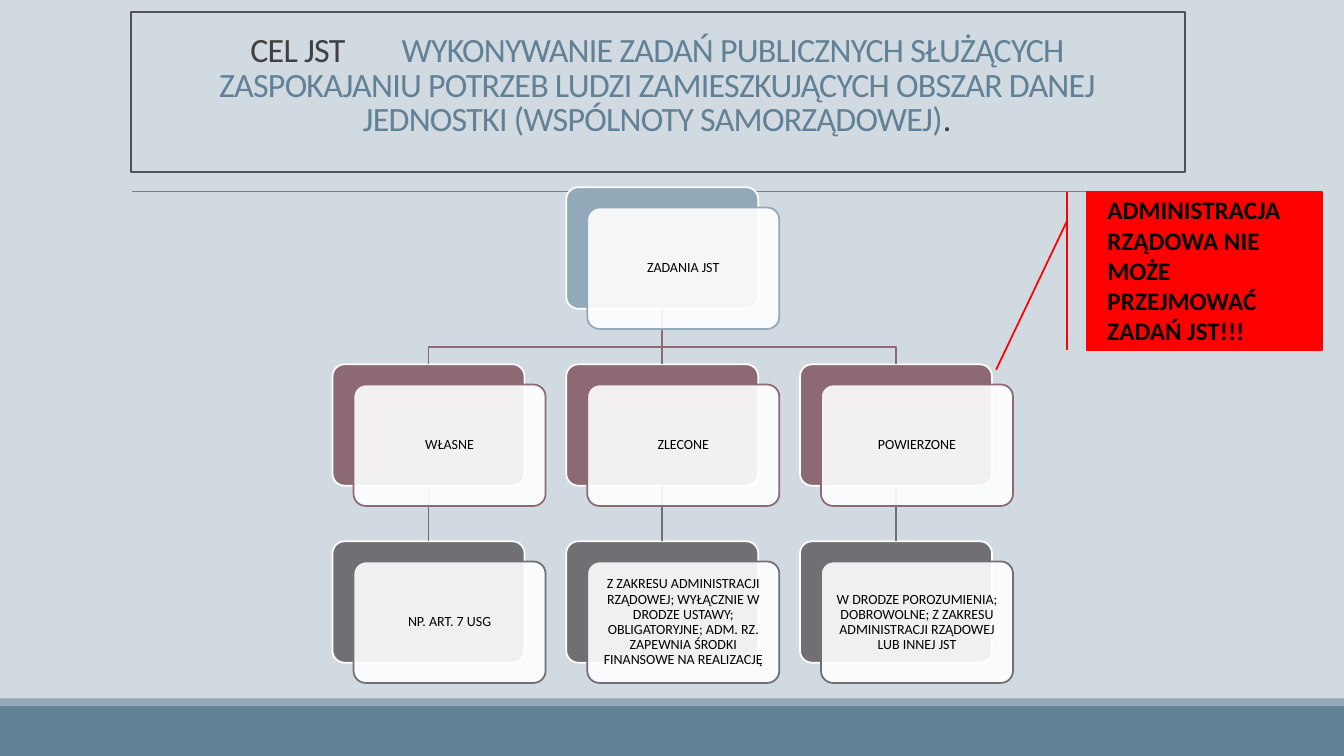
from lxml.etree import SubElement
from pptx import Presentation
from pptx.dml.color import RGBColor
from pptx.enum.shapes import MSO_CONNECTOR, MSO_SHAPE
from pptx.enum.text import MSO_ANCHOR, PP_ALIGN
from pptx.oxml.ns import qn
from pptx.util import Cm, Pt

COLORS = {
    "background": "D1D9E1", "footer": "618197", "steel": "92A9B9",
    "rule": "808080", "frame": "525256", "title": "404040",
    "mauve": "8D6974", "gray": "6F6F74", "white": "FFFFFF",
    "alert": "FF0000", "text": "000000",
}
LEVEL_COLORS = ["steel", "mauve", "gray"]
TASKS = {
    (1, 0): "ZADANIA JST",
    (0, 1): "WŁASNE",
    (1, 1): "ZLECONE",
    (2, 1): "POWIERZONE",
    (0, 2): "NP. ART. 7 USG",
    (1, 2): "Z ZAKRESU ADMINISTRACJI RZĄDOWEJ; WYŁĄCZNIE W DRODZE USTAWY; "
            "OBLIGATORYJNE; ADM. RZ. ZAPEWNIA ŚRODKI FINANSOWE NA REALIZACJĘ",
    (2, 2): "W DRODZE POROZUMIENIA; DOBROWOLNE; Z ZAKRESU ADMINISTRACJI "
            "RZĄDOWEJ LUB INNEJ JST",
}
TITLE_RUNS = [
    ("CEL JST \t", "title"),
    ("WYKONYWANIE ZADAŃ PUBLICZNYCH SŁUŻĄCYCH ZASPOKAJANIU POTRZEB LUDZI "
     "ZAMIESZKUJĄCYCH OBSZAR DANEJ JEDNOSTKI (WSPÓLNOTY SAMORZĄDOWEJ)", "footer"),
    (".", "title"),
]


def rgb(name):
    """Return the named colour."""
    return RGBColor.from_string(COLORS[name])


def apply_format(target, values):
    """Set each attribute of the target from a dict."""
    for name, value in values.items():
        setattr(target, name, value)


def style_line(shape, color, width=1.25):
    """Give an outline a colour and a width in points."""
    shape.line.color.rgb = rgb(color)
    shape.line.width = Pt(width)


def add_block(slide, kind, box, fill, line=None):
    """Add a filled preset shape in a box of centimetres."""
    shape = slide.shapes.add_shape(kind, *map(Cm, box))
    shape.shadow.inherit = False
    shape.fill.solid()
    shape.fill.fore_color.rgb = rgb(fill)
    if line:
        style_line(shape, line)
    else:
        shape.line.fill.background()
    return shape


def add_line(slide, start, end, color, width=1.25):
    """Add a straight connector without a shadow."""
    line = slide.shapes.add_connector(MSO_CONNECTOR.STRAIGHT, *start, *end)
    style_line(line, color, width)
    SubElement(line.element.spPr, qn("a:effectLst"))
    return line


def add_run(paragraph, text, size, color="text", bold=False):
    """Add one run of Calibri text."""
    run = paragraph.add_run()
    run.text = text
    apply_format(run.font, {"name": "Calibri", "size": Pt(size), "bold": bold})
    run.font.color.rgb = rgb(color)
    return run


def draw_backdrop(slide, box):
    """Draw the background, footer bands and the rule below the title."""
    left, top, width, height = box
    slide.background.fill.solid()
    slide.background.fill.fore_color.rgb = rgb("background")
    bottom = top + height
    add_block(slide, MSO_SHAPE.RECTANGLE, (left, bottom - 1.27, width, 1.27), "footer")
    add_block(slide, MSO_SHAPE.RECTANGLE, (left, bottom - 1.45, width, 0.18), "steel")
    rule_top = Cm(top + 4.83)
    add_line(slide, (Cm(left + 3.33), rule_top), (Cm(left + 31.01), rule_top), "rule", 0.5)


def draw_title(slide, box):
    """Draw the framed title with its placeholder above the frame."""
    left, top, width, height = box
    add_block(slide, MSO_SHAPE.RECTANGLE, box, "background", "frame")
    title = slide.shapes.title
    title.element.getparent().append(title.element)
    apply_format(title, {"left": Cm(left + 0.66), "top": Cm(top + 0.45),
                         "width": Cm(width - 1.37), "height": Cm(2.75)})
    apply_format(title.text_frame, {
        "vertical_anchor": MSO_ANCHOR.BOTTOM, "word_wrap": True,
        "margin_top": 0, "margin_bottom": 0})
    paragraph = title.text_frame.paragraphs[0]
    apply_format(paragraph, {"alignment": PP_ALIGN.CENTER, "line_spacing": 0.85})
    for text, color in TITLE_RUNS:
        run = add_run(paragraph, text, 24.3, color)
        run.font.element.set("spc", "-50") if hasattr(run.font, "element") else \
            paragraph.runs[-1].font._element.set("spc", "-50") if hasattr(run.font, "_element") else \
            run._r.get_or_add_rPr().set("spc", "-50")


def link_tasks(slide, parent, child, color):
    """Join a parent card to a child with a straight or bent line."""
    start_x, start_y = parent.left + parent.width // 2, parent.top + parent.height
    end_x, end_y = child.left + child.width // 2, child.top
    if start_x == end_x:
        line = add_line(slide, (start_x, start_y), (end_x, end_y), color)
        line.begin_connect(parent, 2)
        line.end_connect(child, 0)
        return
    bend_y = start_y + Cm(0.96)
    builder = slide.shapes.build_freeform(start_x, start_y)
    builder.add_line_segments([(start_x, bend_y), (end_x, bend_y), (end_x, end_y)], close=False)
    elbow = builder.convert_to_shape()
    elbow.shadow.inherit = False
    elbow.fill.background()
    style_line(elbow, color)


def draw_front_card(slide, box, text, color):
    """Draw the translucent labelled card in front of a task."""
    card = add_block(slide, MSO_SHAPE.ROUNDED_RECTANGLE, box, "white", color)
    card.adjustments[0] = 0.1
    fill_color = card.element.spPr.find(qn("a:solidFill")).find(qn("a:srgbClr"))
    SubElement(fill_color, qn("a:alpha"), val="90000")
    margins = {f"margin_{side}": Cm(0.2) for side in ("left", "top", "right", "bottom")}
    apply_format(card.text_frame, {
        "word_wrap": True, "vertical_anchor": MSO_ANCHOR.MIDDLE, **margins})
    paragraph = card.text_frame.paragraphs[0]
    apply_format(paragraph, {"alignment": PP_ALIGN.CENTER, "line_spacing": 0.9})
    add_run(paragraph, text, 10)


def draw_task_tree(slide, box):
    """Draw the three-level tree of tasks."""
    left, top, width, height = box
    card_width, card_height, shift_x, shift_y = 4.84, 3.06, 0.53, 0.51
    column_step = (width - card_width - shift_x) / 2
    row_step = (height - card_height - shift_y) / 2
    places = {(column, row): (left + column * column_step, top + row * row_step)
              for column, row in TASKS}
    back_cards = {}
    for (column, row), place in places.items():
        card = add_block(slide, MSO_SHAPE.ROUNDED_RECTANGLE,
                         (*place, card_width, card_height), LEVEL_COLORS[row], "white")
        card.adjustments[0] = 0.1
        back_cards[column, row] = card
    for (column, row), card in back_cards.items():
        if row:
            parent = back_cards[1 if row == 1 else column, row - 1]
            link_tasks(slide, parent, card, LEVEL_COLORS[row])
    for (column, row), (x, y) in places.items():
        draw_front_card(slide, (x + shift_x, y + shift_y, card_width, card_height),
                        TASKS[column, row], LEVEL_COLORS[row])


def draw_warning(slide, box):
    """Draw the red callout and its bold text."""
    left, top, width, height = box
    add_block(slide, MSO_SHAPE.LINE_CALLOUT_1_BORDER_AND_ACCENT_BAR, box, "alert", "alert")
    label = slide.shapes.add_textbox(
        Cm(left + 0.28), Cm(top - 0.05), Cm(width - 0.63), Cm(height + 0.12))
    label.text_frame.word_wrap = True
    add_run(label.text_frame.paragraphs[0],
            "ADMINISTRACJA RZĄDOWA NIE MOŻE PRZEJMOWAĆ ZADAŃ JST!!!", 18, bold=True)


def main():
    """Build and save the slide."""
    presentation = Presentation()
    apply_format(presentation, {"slide_width": Cm(33.87), "slide_height": Cm(19.05)})
    slide = presentation.slides.add_slide(presentation.slide_layouts[5])
    draw_backdrop(slide, (0, 0, 33.87, 19.05))
    draw_title(slide, (3.3, 0.3, 26.57, 4.04))
    draw_task_tree(slide, (8.38, 4.72, 17.15, 12.49))
    draw_warning(slide, (27.38, 4.83, 5.94, 3.99))
    presentation.save("out.pptx")


if __name__ == "__main__":
    main()
